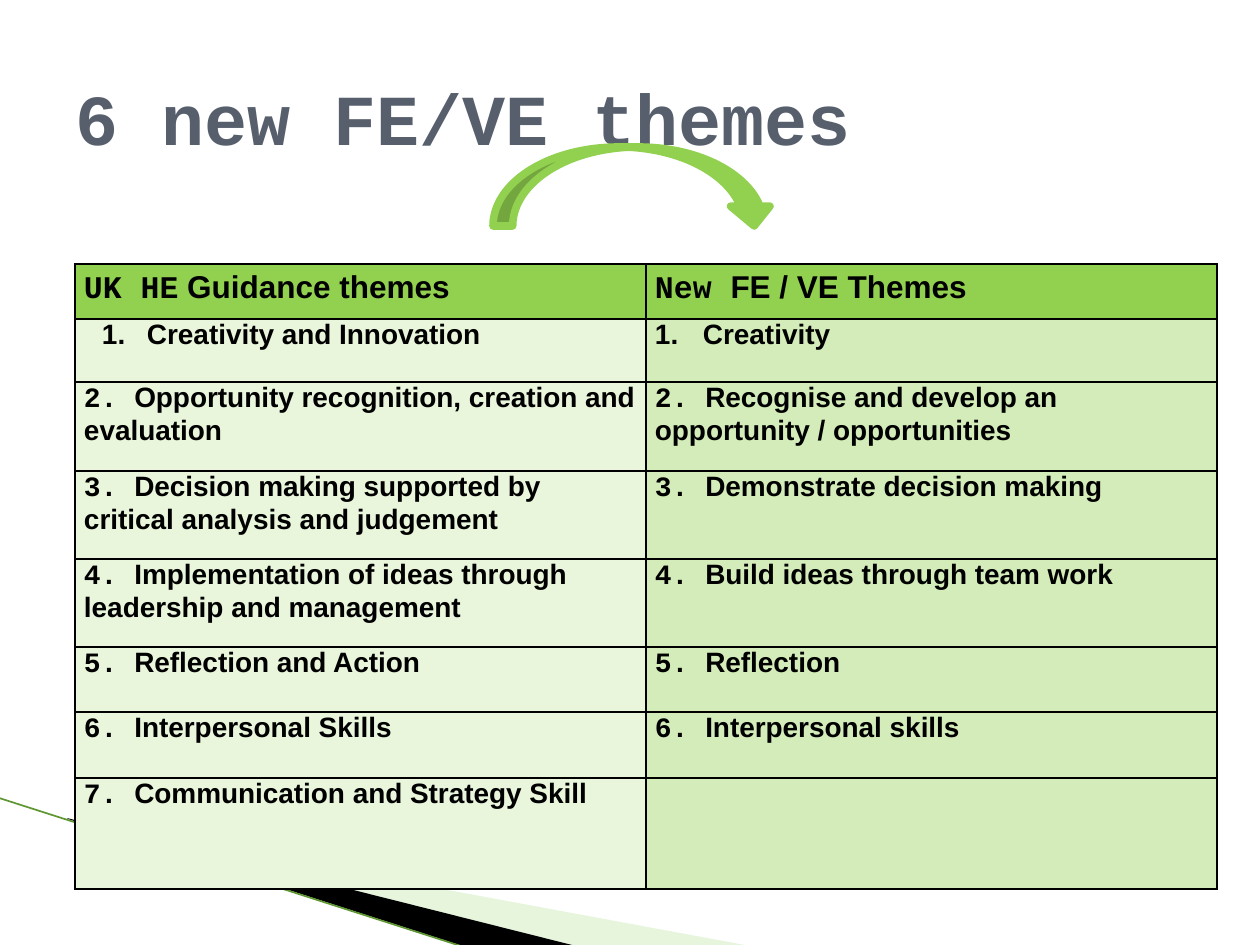
import pptx
import pptx.dml.color
import pptx.enum.shapes
import pptx.enum.text
import pptx.oxml
import pptx.oxml.ns
import pptx.util
from lxml import etree

RGBColor = pptx.dml.color.RGBColor
SCALE = 914400 / 126
BLACK = RGBColor(0x00, 0x00, 0x00)
SLATE = RGBColor(0x57, 0x5F, 0x6D)
GREEN = RGBColor(0x92, 0xD0, 0x50)
DARK_GREEN = RGBColor(0x5E, 0x97, 0x32)
SWOOSH_GREEN = RGBColor(0xC1, 0xE6, 0xA6)
COLUMN_FILLS = (RGBColor(0xE9, 0xF6, 0xDC), RGBColor(0xD3, 0xEC, 0xB9))
MONO = "Courier New"
SANS = "Arial"

ROW_HEIGHTS = (55, 63, 89, 88, 88, 65, 66, 111)
HEADERS = (
    (("UK HE", MONO), (" Guidance themes", SANS)),
    (("New ", MONO), ("FE / VE Themes", SANS)),
)
THEMES = (
    ("Creativity and Innovation", "Creativity"),
    ("Opportunity recognition, creation and evaluation",
     "Recognise and develop an opportunity / opportunities"),
    ("Decision making supported by critical analysis and judgement",
     "Demonstrate decision making"),
    ("Implementation of ideas through leadership and management",
     "Build ideas through team work"),
    ("Reflection and Action", "Reflection"),
    ("Interpersonal Skills", "Interpersonal skills"),
    ("Communication and Strategy Skill", ""),
)
NUMBER_INDENTS = ((63, -45), (48, -53))


def px(length):
    """Turn px into EMU."""
    return pptx.util.Emu(round(length * SCALE))


def add_swoosh(slide, points, color, opacity=None):
    """Draw one filled wedge through the given points."""
    builder = slide.shapes.build_freeform(*points[0], scale=SCALE)
    builder.add_line_segments(points[1:], close=True)
    shape = builder.convert_to_shape()
    shape.shadow.inherit = False
    shape.fill.solid()
    shape.fill.fore_color.rgb = color
    shape.line.fill.background()
    if opacity is not None:
        color_element = shape.element.spPr.find(
            ".//" + pptx.oxml.ns.qn("a:srgbClr"))
        etree.SubElement(color_element, pptx.oxml.ns.qn("a:alpha"),
                         val=str(opacity * 1000))


def add_decoration(slide, left, top):
    """Draw the wedges and the thin line in the lower left corner."""
    def place(*points):
        return [(left + x, top + y) for x, y in points]

    add_swoosh(slide, place((70, 22), (751, 148), (576, 148), (70, 21)),
               SWOOSH_GREEN, opacity=40)
    add_swoosh(slide, place((68, 20), (577, 148), (470, 150), (69, 21)), BLACK)
    line = slide.shapes.add_connector(
        pptx.enum.shapes.MSO_CONNECTOR.STRAIGHT,
        px(left), px(top), px(left + 468), px(top + 150))
    line.line.color.rgb = DARK_GREEN
    line.line.width = pptx.util.Pt(0.95)
    etree.SubElement(line.element.spPr, pptx.oxml.ns.qn("a:effectLst"))


def add_title(slide, left, top, width, height):
    """Fill and place the title placeholder."""
    title = slide.shapes.title
    title.left, title.top = px(left), px(top)
    title.width, title.height = px(width), px(height)
    frame = title.text_frame
    frame.text = "6 new FE/VE themes"
    frame.auto_size = pptx.enum.text.MSO_AUTO_SIZE.NONE
    frame.vertical_anchor = pptx.enum.text.MSO_ANCHOR.MIDDLE
    paragraph = frame.paragraphs[0]
    paragraph.alignment = pptx.enum.text.PP_ALIGN.LEFT
    paragraph.font.name = MONO
    paragraph.font.size = pptx.util.Pt(41)
    paragraph.font.bold = True
    paragraph.font.color.rgb = SLATE


def add_arrow(slide, left, top, width, height):
    """Draw the curved arrow from the old themes to the new ones."""
    arrow = slide.shapes.add_shape(
        pptx.enum.shapes.MSO_SHAPE.CURVED_DOWN_ARROW,
        px(left), px(top), px(width), px(height))
    for index, value in enumerate((0.25, 0.5, 0.25)):
        arrow.adjustments[index] = value
    arrow.shadow.inherit = False
    arrow.fill.solid()
    arrow.fill.fore_color.rgb = GREEN
    arrow.line.color.rgb = GREEN
    arrow.line.width = pptx.util.Pt(4.33)


def format_cell(cell, color):
    """Set the margins, borders and fill of a cell."""
    cell.margin_left = cell.margin_right = px(9)
    cell.margin_top = cell.margin_bottom = 0
    for side in ("lnL", "lnR", "lnT", "lnB"):
        cell._tc.get_or_add_tcPr().append(pptx.oxml.parse_xml(
            f'<a:{side} {pptx.oxml.ns.nsdecls("a")} w="12700"><a:solidFill>'
            f'<a:srgbClr val="{BLACK}"/></a:solidFill></a:{side}>'))
    cell.fill.solid()
    cell.fill.fore_color.rgb = color


def write_cell(cell, parts, size):
    """Write runs of (text, font name) in bold black."""
    paragraph = cell.text_frame.paragraphs[0]
    paragraph.font.size = pptx.util.Pt(size)
    paragraph.font.bold = True
    paragraph.font.color.rgb = BLACK
    for text, font_name in parts:
        run = paragraph.add_run()
        run.text = text
        run.font.name = font_name
        run.font.size = pptx.util.Pt(size)
        run.font.bold = True
        run.font.color.rgb = BLACK
    return paragraph


def number_paragraph(paragraph, margin, indent):
    """Give a paragraph an automatic number with a hanging indent."""
    properties = paragraph._p.get_or_add_pPr()
    properties.set("marL", str(px(margin)))
    properties.set("indent", str(px(indent)))
    number = etree.Element(pptx.oxml.ns.qn("a:buAutoNum"), type="arabicPeriod")
    properties.insert(0, number)


def add_themes_table(slide, left, top, width):
    """Build the table that sets old themes beside new ones."""
    table = slide.shapes.add_table(
        len(ROW_HEIGHTS), len(HEADERS), px(left), px(top), px(width),
        px(sum(ROW_HEIGHTS))).table
    table.horz_banding = False
    for row, height in zip(table.rows, ROW_HEIGHTS):
        row.height = px(height)
    for column, parts in enumerate(HEADERS):
        table.columns[column].width = px(width / len(HEADERS))
        cell = table.cell(0, column)
        format_cell(cell, GREEN)
        write_cell(cell, parts, 18).line_spacing = 1.15
    for number, themes in enumerate(THEMES, start=1):
        for column, theme in enumerate(themes):
            cell = table.cell(number, column)
            format_cell(cell, COLUMN_FILLS[column])
            if number == 1:
                paragraph = write_cell(cell, [(theme, SANS)], 16)
                number_paragraph(paragraph, *NUMBER_INDENTS[column])
            elif theme:
                write_cell(cell, [(f"{number}. ", MONO), (theme, SANS)], 16)


def main():
    """Build and save the slide."""
    presentation = pptx.Presentation()
    presentation.slide_width, presentation.slide_height = px(1260), px(945)
    slide = presentation.slides.add_slide(presentation.slide_layouts[5])
    add_decoration(slide, -1, 798)
    add_themes_table(slide, 75, 264, 1142)
    add_title(slide, 63, 38, 1134, 158)
    add_arrow(slide, 493, 147, 281, 79)
    presentation.save("out.pptx")


if __name__ == "__main__":
    main()
